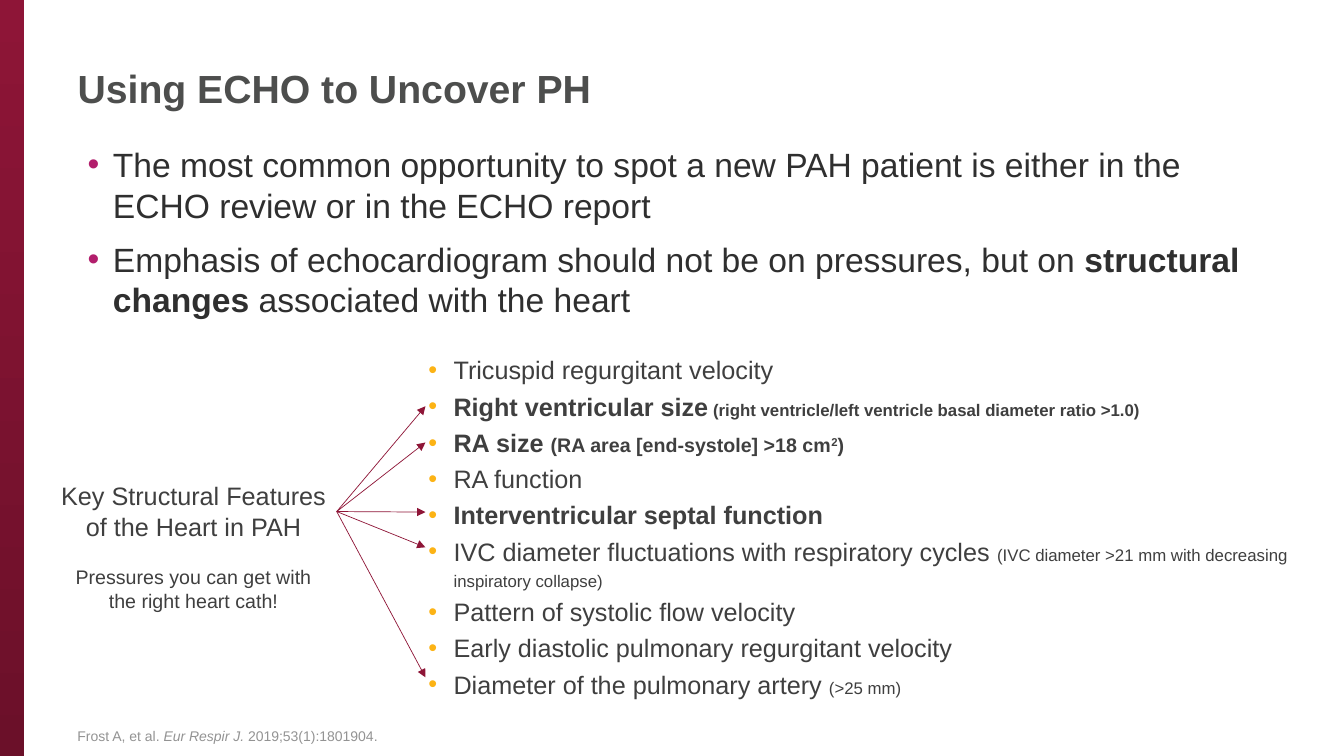
import pptx
import pptx.util
import pptx.dml.color
import pptx.enum.dml
import pptx.enum.shapes
import pptx.enum.text
import pptx.oxml.ns
import lxml.etree

PX = 9144
THEME = {
    "face": "Arial",
    "wine": "8E1537", "dark": "6B1029", "rose": "B21E6C", "gold": "FCB315",
    "head": "4D4E4D", "ink": "2F2F2F", "text": "3F3F3F", "gray": "939393",
    "title": 28, "lead": 24, "main": 18, "side": 14, "note": 12, "cite": 10,
}
MAIN, SIDE, NOTE = THEME["main"], THEME["side"], THEME["note"]
rgb = pptx.dml.color.RGBColor.from_string
align = pptx.enum.text.PP_ALIGN
anchor = pptx.enum.text.MSO_ANCHOR
fit = pptx.enum.text.MSO_AUTO_SIZE
qn = pptx.oxml.ns.qn


def place(shape, left, top, width, height):
    shape.left, shape.top = left * PX, top * PX
    shape.width, shape.height = width * PX, height * PX
    shape.text_frame.word_wrap = True
    shape.text_frame.auto_size = fit.NONE
    return shape.text_frame


def write(frame, items, color, bullet=None, space=0, lines=1.0, side=align.LEFT):
    for i, parts in enumerate(items):
        para = frame.add_paragraph() if i else frame.paragraphs[0]
        para.alignment = side
        para.line_spacing = lines
        para.space_before = pptx.util.Pt(space)
        for words, size, style in parts:
            run = para.add_run()
            run.text = words
            font = run.font
            font.name, font.size = THEME["face"], pptx.util.Pt(size)
            font.color.rgb = rgb(THEME[color])
            font.bold, font.italic = "b" in style, "i" in style
            if "^" in style:
                run._r.get_or_add_rPr().set("baseline", "30000")
        if bullet:
            props = para._p.get_or_add_pPr()
            props.set("marL", str(25 * PX))
            props.set("indent", str(-25 * PX))
            tint = lxml.etree.SubElement(props, qn("a:buClr"))
            lxml.etree.SubElement(tint, qn("a:srgbClr")).set("val", THEME[bullet])
            lxml.etree.SubElement(props, qn("a:buFont")).set("typeface", THEME["face"])
            lxml.etree.SubElement(props, qn("a:buChar")).set("char", "•")


deck = pptx.Presentation()
deck.slide_width, deck.slide_height = 1333 * PX, 750 * PX
slide = deck.slides.add_slide(deck.slide_layouts[1])
shapes = slide.shapes

bar = shapes.add_shape(pptx.enum.shapes.MSO_SHAPE.RECTANGLE, -1 * PX, 0, 25 * PX, 751 * PX)
bar.shadow.inherit = False
bar.line.fill.background()
bar.fill.gradient()
bar.fill.gradient_angle = 270
for stop, name in zip(bar.fill.gradient_stops, ("wine", "dark")):
    stop.color.rgb = rgb(THEME[name])

title = place(shapes.title, 67, 22, 1175, 130)
title.vertical_anchor = anchor.MIDDLE
write(title, [[("Using ECHO to Uncover PH", THEME["title"], "b")]], "head")

lead = THEME["lead"]
body = place(slide.placeholders[1], 77, 138, 1202, 213)
write(body, [
    [("The most common opportunity to spot a new PAH patient is either in the "
      "ECHO review or in the ECHO report", lead, "")],
    [("Emphasis of echocardiogram should not be on pressures, but on ", lead, ""),
     ("structural changes", lead, "b"),
     (" associated with the heart", lead, "")],
], "ink", "rose", space=10)

signs = place(shapes.add_textbox(0, 0, 0, 0), 415, 341, 899, 371)
write(signs, [
    [("Tricuspid regurgitant velocity", MAIN, "")],
    [("Right ventricular size", MAIN, "b"),
     (" (right ventricle/left ventricle basal diameter ratio >1.0)", NOTE, "b")],
    [("RA size ", MAIN, "b"), ("(RA area [end-systole] >18 cm", SIDE, "b"),
     ("2", SIDE, "b^"), (")", SIDE, "b")],
    [("RA function", MAIN, "")],
    [("Interventricular septal function", MAIN, "b")],
    [("IVC diameter fluctuations with respiratory cycles ", MAIN, ""),
     ("(IVC diameter >21 mm with decreasing inspiratory collapse)", NOTE, "")],
    [("Pattern of systolic flow velocity", MAIN, "")],
    [("Early diastolic pulmonary regurgitant velocity", MAIN, "")],
    [("Diameter of the pulmonary artery ", MAIN, ""), ("(>25 mm)", NOTE, "")],
], "text", "gold", lines=1.2)

label = shapes.add_textbox(0, 0, 0, 0)
for box, top, height, words, size in (
    (label, 472, 71, "Key Structural Features of the Heart in PAH", MAIN),
    (shapes.add_textbox(0, 0, 0, 0), 556, 57,
     "Pressures you can get with the right heart cath!", SIDE),
):
    frame = place(box, 50, top, 284, height)
    frame.auto_size = fit.SHAPE_TO_FIT_TEXT
    write(frame, [[(words, size, "")]], "text", side=align.CENTER)

for end in (403, 439, 508, 543, 672):
    arrow = shapes.add_connector(
        pptx.enum.shapes.MSO_CONNECTOR.STRAIGHT, 335 * PX, 508 * PX, 422 * PX, end * PX)
    arrow.begin_connect(label, 3)
    arrow.line.color.rgb = rgb(THEME["wine"])
    arrow.line.width = pptx.util.Pt(0.5)
    tip = lxml.etree.SubElement(arrow.line._get_or_add_ln(), qn("a:tailEnd"))
    tip.set("type", "triangle")
    lxml.etree.SubElement(arrow._element.spPr, qn("a:effectLst"))

cite = place(shapes.add_textbox(0, 0, 0, 0), 67, 695, 1175, 48)
cite.vertical_anchor = anchor.BOTTOM
write(cite, [[
    ("Frost A, et al. ", THEME["cite"], ""),
    ("Eur Respir J. ", THEME["cite"], "i"),
    ("2019;53(1):1801904.", THEME["cite"], ""),
]], "gray")

deck.save("out.pptx")
